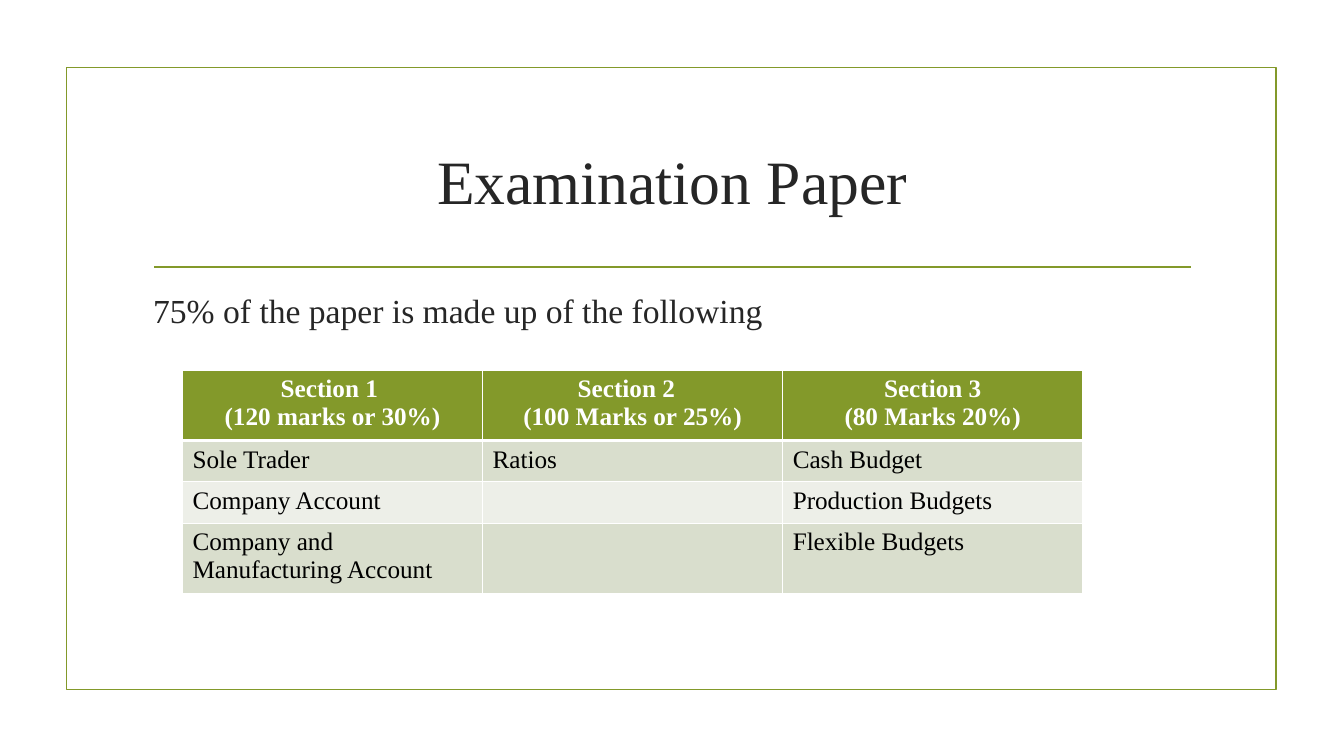
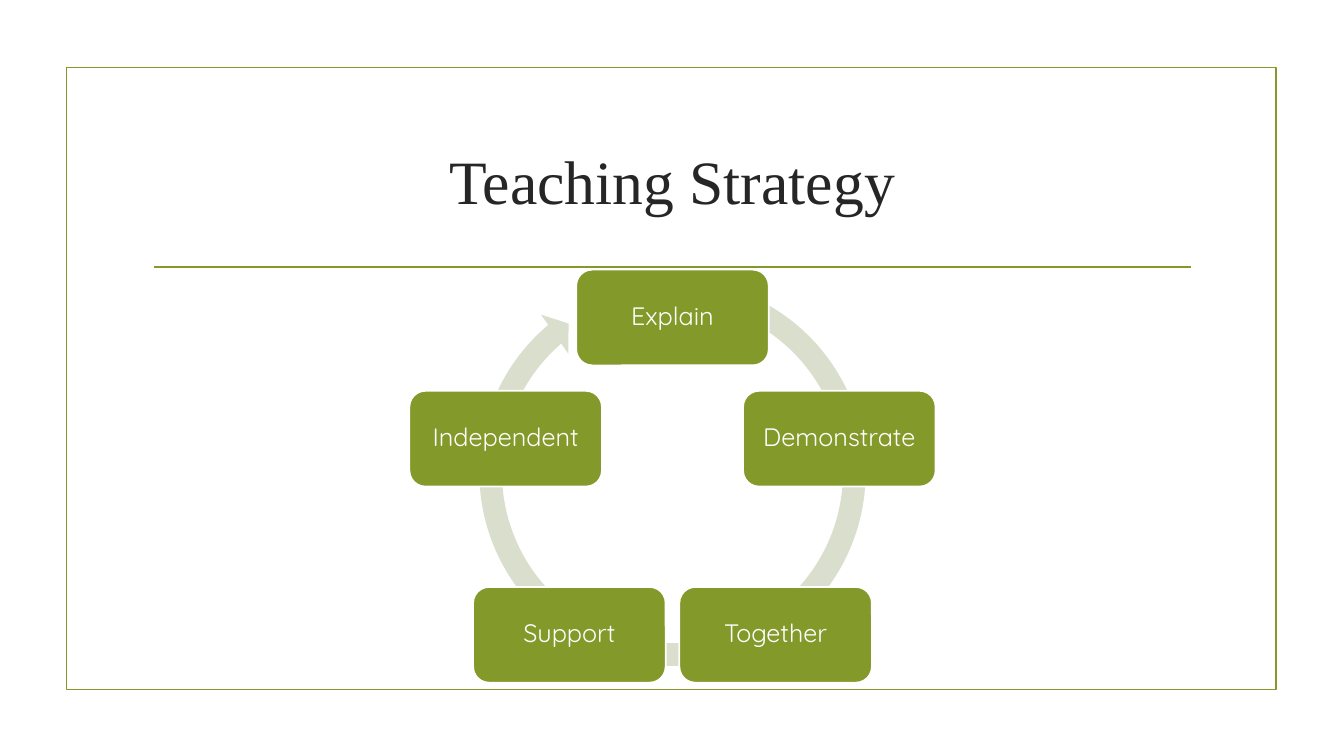
import math
from lxml import etree
from pptx import Presentation
from pptx.dml.color import RGBColor
from pptx.enum import shapes, text
from pptx.oxml import ns
from pptx.util import Inches, Pt

# Content
EXAM = "Examination Paper"
LEAD = "75% of the paper is made up of the following"
HEADS = [
    ["Section 1 ", "(120 marks or 30%)"],
    ["Section 2  ", "(100 Marks or 25%)"],
    ["Section 3", "(80 Marks 20%)"],
]
ROWS = [
    ["Sole Trader", "Ratios", "Cash Budget"],
    ["Company Account", "", "Production Budgets"],
    ["Company and Manufacturing Account", "", "Flexible Budgets"],
]
PLAN = "Teaching Strategy"
STEPS = ["Explain", "Demonstrate", "Together", "Support", "Independent"]

# Shared style
GREEN, PALE, LIGHT = "83992A", "D9DECD", "EDEFE8"
DARK, WHITE, BLACK = "262626", "FFFFFF", "000000"
SERIF, SANS = "Times New Roman", "Quicksand"
MID = text.PP_ALIGN.CENTER


def rgb(code):
    return RGBColor.from_string(code)


def box(x, y, w, h):
    return [Inches(n) for n in (x, y, w, h)]


def write(frame, lines, size, color, font=SERIF, bold=False, align=None):
    for i, line in enumerate(lines):
        para = frame.add_paragraph() if i else frame.paragraphs[0]
        para.alignment = align
        run = para.add_run()
        run.text = line
        run.font.name, run.font.size, run.font.bold = font, Pt(size), bold
        run.font.color.rgb = rgb(color)


def shape(slide, kind, place, fill=None, line=None):
    item = slide.shapes.add_shape(kind, *box(*place))
    item.shadow.inherit = False
    if fill:
        item.fill.solid()
        item.fill.fore_color.rgb = rgb(fill)
    else:
        item.fill.background()
    if line:
        item.line.color.rgb = rgb(line)
        item.line.width = Pt(1.25)
    else:
        item.line.fill.background()
    return item


def start(deck, name):
    """Add a slide with the frame, the rule and the title."""
    slide = deck.slides.add_slide(deck.slide_layouts[5])
    shape(slide, shapes.MSO_SHAPE.RECTANGLE, (0.66, 0.67, 12, 6.17), line=GREEN)
    rule = slide.shapes.add_connector(
        shapes.MSO_CONNECTOR.STRAIGHT, *box(1.53, 2.65, 11.81, 2.65))
    rule.line.color.rgb = rgb(GREEN)
    rule.line.width = Pt(1.25)
    etree.SubElement(rule._element.spPr, ns.qn("a:effectLst"))
    title = slide.shapes.title
    title.left, title.top, title.width, title.height = box(1.42, 1.07, 10.5, 1.43)
    frame = title.text_frame
    frame.auto_size = text.MSO_AUTO_SIZE.NONE
    frame.vertical_anchor = text.MSO_ANCHOR.MIDDLE
    write(frame, [name], 44, DARK, align=MID)
    return slide


def edge(cell, top, low):
    """Draw white cell borders; they come before the fill."""
    props = cell._tc.get_or_add_tcPr()
    sides = [("L", 1), ("R", 1), ("T", top), ("B", low)]
    for i, (side, width) in enumerate(sides):
        line = etree.Element(ns.qn("a:ln" + side), w=str(Pt(width)))
        fill = etree.SubElement(line, ns.qn("a:solidFill"))
        etree.SubElement(fill, ns.qn("a:srgbClr"), val=WHITE)
        props.insert(i, line)


def exam(deck):
    slide = start(deck, EXAM)
    lead = slide.shapes.add_textbox(*box(1.42, 2.83, 10.5, 0.5))
    lead.text_frame.word_wrap = True
    write(lead.text_frame, [LEAD], 24, DARK)

    # Table of sections
    tall = [0.65, 0.41, 0.41, 0.65]
    grid = slide.shapes.add_table(
        len(tall), len(HEADS), *box(1.81, 3.67, 8.93, sum(tall))).table
    for row, high in zip(grid.rows, tall):
        row.height = Inches(high)
    for col in grid.columns:
        col.width = Inches(8.93 / len(HEADS))
    cells = [HEADS] + [[[word] for word in row] for row in ROWS]
    for r, row in enumerate(cells):
        for c, lines in enumerate(row):
            cell = grid.cell(r, c)
            head = r == 0
            cell.fill.solid()
            cell.fill.fore_color.rgb = rgb(
                GREEN if head else PALE if r % 2 else LIGHT)
            edge(cell, 3 if r == 1 else 1, 3 if head else 1)
            if any(lines):
                write(cell.text_frame, lines, 18, WHITE if head else BLACK,
                      bold=head, align=MID if head else None)


def plan(deck):
    slide = start(deck, PLAN)
    ring = shape(slide, shapes.MSO_SHAPE.CIRCULAR_ARROW,
                 (4.63, 2.65, 4.08, 4.08), PALE)
    for i, value in enumerate([0.055, 3.307, 137.781, 173.846, 0.058]):
        ring.adjustments[i] = value

    # Steps spaced evenly round a circle, from the top
    midx, midy, far, wide, high = 6.67, 4.89, 1.74, 1.91, 0.95
    for i, step in enumerate(STEPS):
        turn = 2 * math.pi * i / len(STEPS)
        x = midx + far * math.sin(turn) - wide / 2
        y = midy - far * math.cos(turn) - high / 2
        card = shape(slide, shapes.MSO_SHAPE.ROUNDED_RECTANGLE,
                     (x, y, wide, high), GREEN, WHITE)
        frame = card.text_frame
        frame.word_wrap = True
        frame.vertical_anchor = text.MSO_ANCHOR.MIDDLE
        frame.margin_left = frame.margin_right = Inches(0.07)
        write(frame, [step], 18, WHITE, SANS, align=MID)
        frame.paragraphs[0].line_spacing = 0.9


def main():
    deck = Presentation()
    deck.slide_width, deck.slide_height = Inches(13.33), Inches(7.5)
    exam(deck)
    plan(deck)
    deck.save("out.pptx")


if __name__ == "__main__":
    main()
